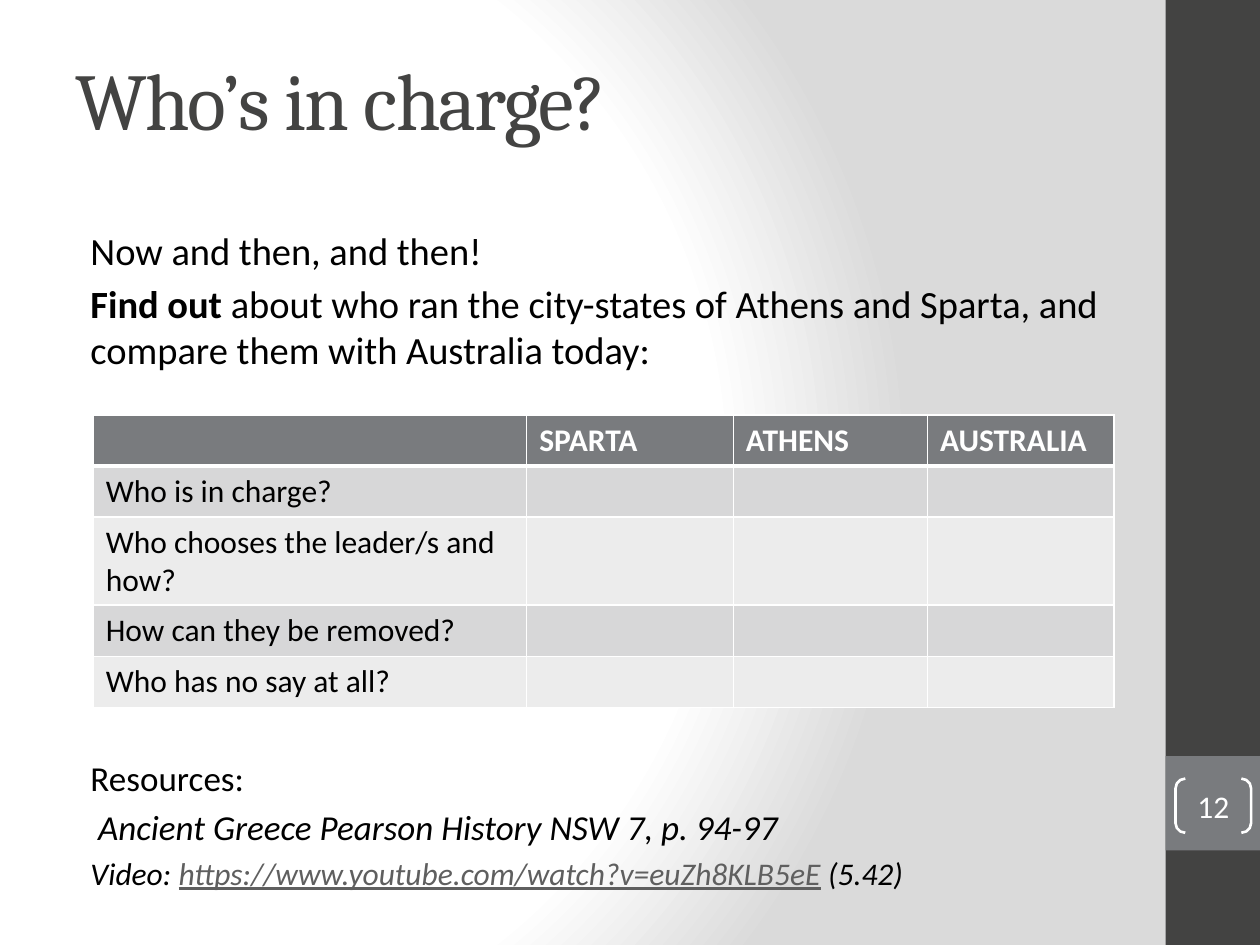
from dataclasses import dataclass

from lxml import etree
from pptx import Presentation
from pptx import util as u
from pptx.dml.color import RGBColor
from pptx.enum import shapes, text
from pptx.oxml import ns

Pt = u.Pt


@dataclass(frozen=True)
class Theme:
    body_font: str = "Calibri"
    title_font: str = "Cambria"
    dark: str = "434342"
    grey: str = "797B7E"
    band_dark: str = "D7D7D8"
    band_light: str = "ECECEC"
    backdrop: str = "DADADA"
    link: str = "5F5F5F"
    white: str = "FFFFFF"
    black: str = "000000"
    title: int = 46
    lead: int = 22
    resource: int = 20
    small: int = 18


T = Theme()

INTRO = [
    [("Now and then, and then!", {})],
    [("Find out ", {"bold": True}),
     ("about who ran the city-states of Athens and Sparta, "
      "and compare them with Australia today:", {})],
]
ITALIC = {"italic": True}
VIDEO = {"italic": True, "size": Pt(T.small)}
RESOURCES = [
    [("Resources:", {})],
    [("Ancient Greece Pearson History NSW 7, p. 94-97", ITALIC)],
    [("Video: ", VIDEO),
     ("https://www.youtube.com/watch?v=euZh8KLB5eE",
      {**VIDEO, "underline": True, "color": T.link}),
     (" (5.42)", VIDEO)],
]
HEADERS = ["", "SPARTA", "ATHENS", "AUSTRALIA"]
QUESTIONS = [
    "Who is in charge?",
    "Who chooses the leader/s and how?",
    "How can they be removed?",
    "Who has no say at all?",
]


def rgb(value):
    return RGBColor.from_string(value)


def add_xml(parent, tag, **attrs):
    return etree.SubElement(parent, ns.qn(tag), attrs)


def add_run(p, content, **fmt):
    r = p.add_run()
    r.text = content
    base = {"name": T.body_font, "size": Pt(T.small), "color": T.black}
    for key, value in {**base, **fmt}.items():
        if key == "color":
            r.font.color.rgb = rgb(value)
        else:
            setattr(r.font, key, value)
    return r


def add_text(slide, box, paragraphs, size, indent=0, gap=0):
    tf = slide.shapes.add_textbox(*map(Pt, box)).text_frame
    tf.word_wrap = True
    for i, runs in enumerate(paragraphs):
        p = tf.add_paragraph() if i else tf.paragraphs[0]
        if i:
            p.space_before = Pt(gap)
        p._p.get_or_add_pPr().set("marL", str(Pt(indent)))
        for content, fmt in runs:
            add_run(p, content, **{"size": Pt(size), **fmt})
    return tf


def add_shape(slide, kind, box, fill=None, line=None):
    sp = slide.shapes.add_shape(kind, *map(Pt, box))
    sp.shadow.inherit = False
    if fill:
        sp.fill.solid()
        sp.fill.fore_color.rgb = rgb(fill)
    else:
        sp.fill.background()
    if line:
        sp.line.color.rgb = rgb(line)
        sp.line.width = Pt(1.5)
    else:
        sp.line.fill.background()
    return sp


def set_background(slide):
    slide.background.fill.gradient()
    grad = next(slide.element.iter(ns.qn("a:gradFill")))
    for child in list(grad):
        grad.remove(child)
    stops = add_xml(grad, "a:gsLst")
    for pos, color in ((0, T.white), (75, T.white), (100, T.backdrop)):
        stop = add_xml(stops, "a:gs", pos=str(pos * 1000))
        add_xml(stop, "a:srgbClr", val=color)
    circle = add_xml(grad, "a:path", path="circle")
    add_xml(circle, "a:fillToRect", l="20000", t="50000", r="100000", b="50000")


def style_cell(cell, fill, bottom=1):
    cell.fill.solid()
    cell.fill.fore_color.rgb = rgb(fill)
    tc_pr = cell._tc.get_or_add_tcPr()
    widths = {"a:lnL": 1, "a:lnR": 1, "a:lnT": 1, "a:lnB": bottom}
    for i, (tag, width) in enumerate(widths.items()):
        ln = add_xml(tc_pr, tag, w=str(Pt(width)))
        add_xml(add_xml(ln, "a:solidFill"), "a:srgbClr", val=T.white)
        tc_pr.insert(i, ln)  # borders come before the fill


def add_comparison(slide, left, top, col_widths, row_height):
    rows = [HEADERS] + [[q, "", "", ""] for q in QUESTIONS]
    frame = slide.shapes.add_table(
        len(rows), len(HEADERS), Pt(left), Pt(top),
        Pt(sum(col_widths)), Pt(row_height * len(rows)))
    table = frame.table
    for col, width in zip(table.columns, col_widths):
        col.width = Pt(width)
    for i, values in enumerate(rows):
        table.rows[i].height = Pt(row_height)
        header = i == 0
        band = T.band_dark if i % 2 else T.band_light
        for j, value in enumerate(values):
            cell = table.cell(i, j)
            style_cell(cell, T.grey if header else band, 3 if header else 1)
            if value:
                add_run(cell.text_frame.paragraphs[0], value, bold=header,
                        color=T.white if header else T.black)


def add_page_number(slide, number):
    sp = add_shape(slide, shapes.MSO_SHAPE.DOUBLE_BRACKET,
                   (671.76, 444.96, 43.2, 30.96), line=T.white)
    sp.adjustments[0] = 0.18
    tf = sp.text_frame
    for side in ("left", "top", "right", "bottom"):
        setattr(tf, f"margin_{side}", 0)
    tf.vertical_anchor = text.MSO_ANCHOR.MIDDLE
    p = tf.paragraphs[0]
    p.alignment = text.PP_ALIGN.CENTER
    add_run(p, number, color=T.white)


def main():
    prs = Presentation()
    prs.slide_width, prs.slide_height = Pt(720), Pt(540)
    slide = prs.slides.add_slide(prs.slide_layouts[6])
    set_background(slide)

    # Side band with page number
    rect = shapes.MSO_SHAPE.RECTANGLE
    add_shape(slide, rect, (666, 0, 54, 540), fill=T.dark)
    add_shape(slide, rect, (666, 432, 54, 54), fill=T.grey)
    add_page_number(slide, "12")

    # Title
    title = [[("Who’s in charge?", {"name": T.title_font, "color": T.dark})]]
    tf = add_text(slide, (36, 25.2, 600, 90), title, T.title)
    tf.paragraphs[0].runs[0].font._element.set("spc", "-100")

    # Introduction, comparison table and resources
    add_text(slide, (36, 126, 618, 100), INTRO, T.lead, indent=8.64, gap=4)
    add_comparison(slide, 53.3, 237, (247.7, 118.1, 110.9, 106.6), 29.2)
    tf = add_text(slide, (36, 429, 618, 94), RESOURCES, T.resource,
                  indent=8.64, gap=3.6)
    tf.paragraphs[1]._p.get_or_add_pPr().set("marL", str(Pt(13)))

    prs.save("out.pptx")


if __name__ == "__main__":
    main()
